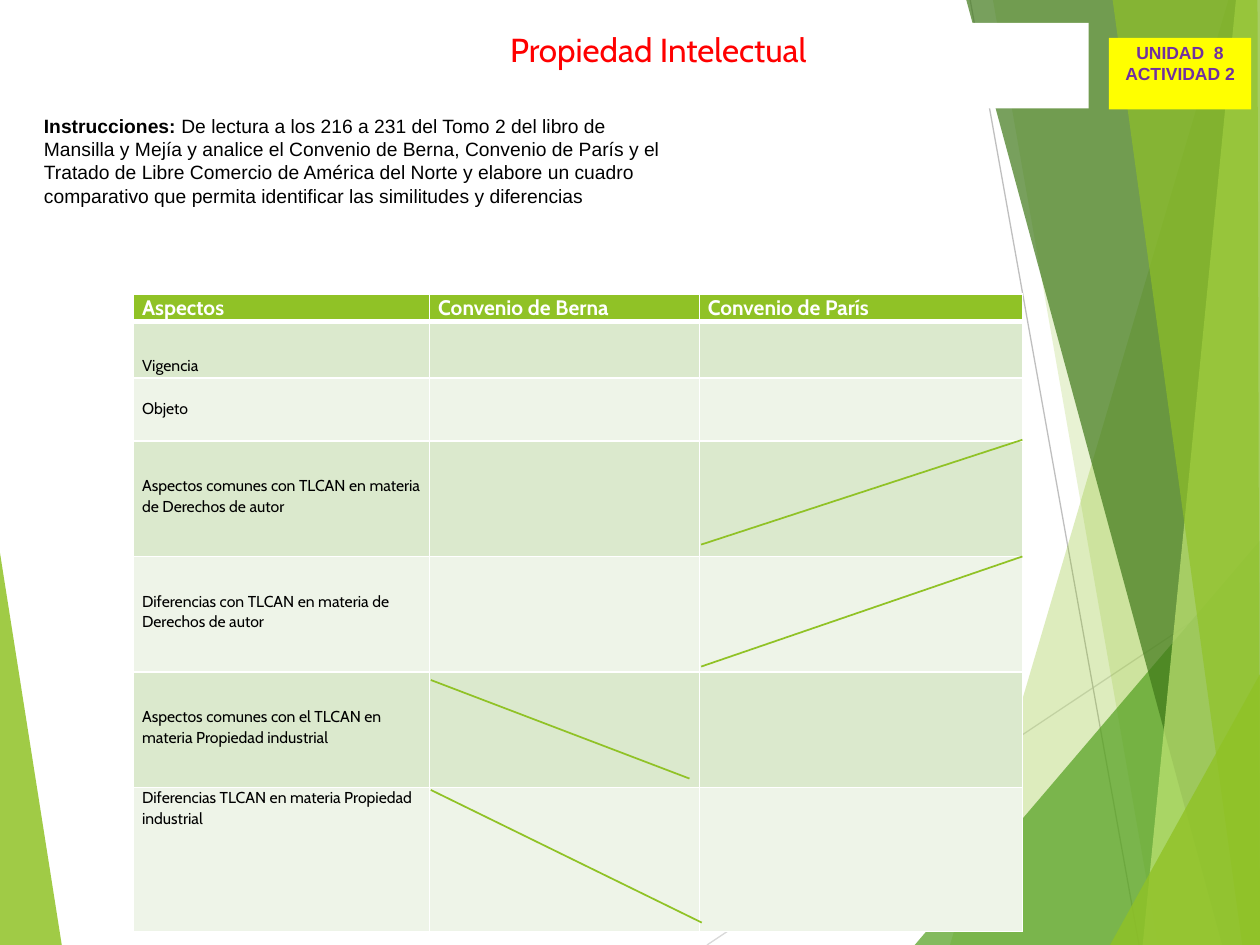
from dataclasses import dataclass

from lxml.etree import SubElement
from pptx import Presentation
from pptx.dml.color import RGBColor as RGB
from pptx.enum.shapes import MSO_CONNECTOR as CONN, MSO_SHAPE as SHAPE
from pptx.enum.text import MSO_ANCHOR as ANCHOR, MSO_AUTO_SIZE as AUTO, PP_ALIGN as ALIGN
from pptx.oxml.ns import qn
from pptx.util import Pt


@dataclass(frozen=True)
class Theme:
    head_font: str = "Cabin"
    body_font: str = "Arial"
    title: float = 19
    header: float = 12
    instructions: float = 11
    label: float = 10
    cell: float = 9
    white: str = "FFFFFF"
    black: str = "000000"
    red: str = "FF0000"
    purple: str = "7030A0"
    yellow: str = "FFFF00"
    lime: str = "90C226"
    green: str = "54A021"
    dark: str = "3F7819"
    pale: str = "C0E474"
    bands: tuple = ("DBE9CD", "EEF4E8")
    grays: tuple = ("D9D9D9", "BFBFBF")


T = Theme()
W, H = 720, 540

# Background facets: corner points, colour, opacity in percent
LEFT_FACET = ([(0, 316), (35.3, H), (0, H)], T.lime, 85)
RIGHT_FACETS = [
    ([(702, 0), (542.9, H), (W, H), (W, 0)], T.lime, 30),
    ([(567.4, 0), (661.7, H), (W, H), (W, 0)], T.lime, 20),
    ([(522.7, H), (W, 308.9), (W, H)], T.green, 72),
    ([(552.2, 0), (698.4, H), (W, H), (W, 0)], T.dark, 70),
    ([(706.3, 0), (653, H), (W, H), (W, 0)], T.pale, 70),
    ([(635.8, 0), (709.9, H), (W, H), (718.6, 0)], T.lime, 65),
    ([(634.3, H), (W, 385.2), (W, H)], T.lime, 80),
]
BACK_LINES = [(404, H, W, 329.4), (554.4, 0, 650.9, H)]

# Table content: row height, space above the text, text
HEADERS = ["Aspectos", "Convenio de Berna", "Convenio de París"]
COLUMNS = [169.2, 154.1, 184.6]
HEADER_HEIGHT = 15.2
ROWS = [
    (32.4, 19.6, "Vigencia"),
    (36, 11.6, "Objeto"),
    (66, 19.6, "Aspectos comunes con TLCAN en materia de Derechos de autor"),
    (66, 19.6, "Diferencias con TLCAN en materia de Derechos de autor"),
    (66, 19.6, "Aspectos comunes con el TLCAN en materia Propiedad industrial"),
    (82.2, 0, "Diferencias TLCAN en materia Propiedad industrial"),
]

# Strokes over the cells that do not apply
STROKES = [
    (246.2, 388.6, 394, 444.9),
    (246.2, 451.4, 401, 527.2),
    (584.2, 251.3, 400.7, 311.2),
    (584.2, 318, 400.7, 380.9),
]


def set_attrs(obj, values):
    for name, value in values.items():
        setattr(obj, name, value)


def add_run(p, text, font, size, color, bold=False):
    r = p.add_run()
    r.text = text
    set_attrs(r.font, {"name": font, "size": Pt(size), "bold": bold})
    r.font.color.rgb = RGB.from_string(color)


def add_facet(s, points, color, opacity):
    start, *rest = [(Pt(x), Pt(y)) for x, y in points]
    builder = s.shapes.build_freeform(*start)
    builder.add_line_segments(rest, close=True)
    sp = builder.convert_to_shape()
    sp.shadow.inherit = False
    sp.line.fill.background()
    sp.fill.solid()
    sp.fill.fore_color.rgb = RGB.from_string(color)
    clr = sp.fill._xPr.find(qn("a:solidFill"))[0]
    SubElement(clr, qn("a:alpha")).set("val", str(opacity * 1000))


def add_line(s, ends, color, width):
    line = s.shapes.add_connector(CONN.STRAIGHT, *map(Pt, ends))
    line.line.color.rgb = RGB.from_string(color)
    line.line.width = Pt(width)
    SubElement(line._element.spPr, qn("a:effectLst"))


def add_box(s, box, fill, lines, style, insets=(7.2, 3.6)):
    sp = s.shapes.add_shape(SHAPE.RECTANGLE, *map(Pt, box))
    sp.shadow.inherit = False
    sp.line.fill.background()
    sp.fill.solid()
    sp.fill.fore_color.rgb = RGB.from_string(fill)
    tf = sp.text_frame
    dx, dy = map(Pt, insets)
    set_attrs(tf, {"word_wrap": True, "vertical_anchor": ANCHOR.TOP,
                   "margin_left": dx, "margin_right": dx,
                   "margin_top": dy, "margin_bottom": dy})
    for i, text in enumerate(lines):
        p = tf.paragraphs[0] if i == 0 else tf.add_paragraph()
        p.alignment = ALIGN.CENTER
        add_run(p, text, *style)


def add_instructions(s):
    tf = s.shapes.add_textbox(*map(Pt, (18, 61.9, 367.9, 60.5))).text_frame
    set_attrs(tf, {"word_wrap": True, "auto_size": AUTO.SHAPE_TO_FIT_TEXT})
    style = (T.body_font, T.instructions, T.black)
    p = tf.paragraphs[0]
    add_run(p, "Instrucciones: ", *style, bold=True)
    add_run(p, "De lectura a los 216 a 231 del Tomo 2 del libro de Mansilla y Mejía "
               "y analice el Convenio de Berna, Convenio de París y el Tratado de Libre "
               "Comercio de América del Norte y elabore un cuadro comparativo que permita "
               "identificar las similitudes y diferencias", *style)


def format_cell(cell, fill, borders, above=0):
    set_attrs(cell, {"margin_left": Pt(4.9), "margin_right": Pt(4.9),
                     "margin_top": Pt(above), "margin_bottom": 0})
    tc_pr = cell._tc.get_or_add_tcPr()
    for side, width in borders.items():
        ln = SubElement(tc_pr, qn(f"a:ln{side}"), w=str(Pt(width)))
        SubElement(SubElement(ln, qn("a:solidFill")), qn("a:srgbClr"), val=T.white)
    cell.fill.solid()
    cell.fill.fore_color.rgb = RGB.from_string(fill)


def write_cell(cell, text, size, color, bold=False):
    p = cell.text_frame.paragraphs[0]
    p.line_spacing = 1.07
    add_run(p, text, T.head_font, size, color, bold)


def add_comparison(s):
    heights = [HEADER_HEIGHT] + [row[0] for row in ROWS]
    frame = s.shapes.add_table(len(heights), len(COLUMNS), Pt(76.3), Pt(167.9),
                               Pt(sum(COLUMNS)), Pt(sum(heights)))
    table = frame.table
    for col, width in zip(table.columns, COLUMNS):
        col.width = Pt(width)
    for row, height in zip(table.rows, heights):
        row.height = Pt(height)
    # Header row
    for c, text in enumerate(HEADERS):
        cell = table.cell(0, c)
        format_cell(cell, T.lime, {"L": 1, "R": 1, "T": 1, "B": 3})
        write_cell(cell, text, T.header, T.white, bold=True)
    # Body rows in alternating bands
    for i, (_, above, text) in enumerate(ROWS):
        for c in range(len(COLUMNS)):
            borders = {"L": 1, "R": 1, "T": 3 if i == 0 else 1, "B": 1}
            format_cell(table.cell(i + 1, c), T.bands[i % 2], borders,
                        above if c == 0 else 0)
        write_cell(table.cell(i + 1, 0), text, T.cell, T.black)


def main():
    prs = Presentation()
    set_attrs(prs, {"slide_width": Pt(W), "slide_height": Pt(H)})
    s = prs.slides.add_slide(prs.slide_layouts[6])
    # Background
    add_facet(s, *LEFT_FACET)
    for ends, gray in zip(BACK_LINES, T.grays):
        add_line(s, ends, gray, 0.75)
    for facet in RIGHT_FACETS:
        add_facet(s, *facet)
    # Content
    add_comparison(s)
    add_instructions(s)
    add_box(s, (130.3, 13, 491.8, 49), T.white, ["Propiedad Intelectual"],
            (T.head_font, T.title, T.red))
    add_box(s, (633.6, 21.6, 81.4, 41), T.yellow, ["UNIDAD  8", "ACTIVIDAD 2"],
            (T.body_font, T.label, T.purple, True), insets=(4.3, 2.2))
    for ends in STROKES:
        add_line(s, ends, T.lime, 1)
    prs.save("out.pptx")


if __name__ == "__main__":
    main()
